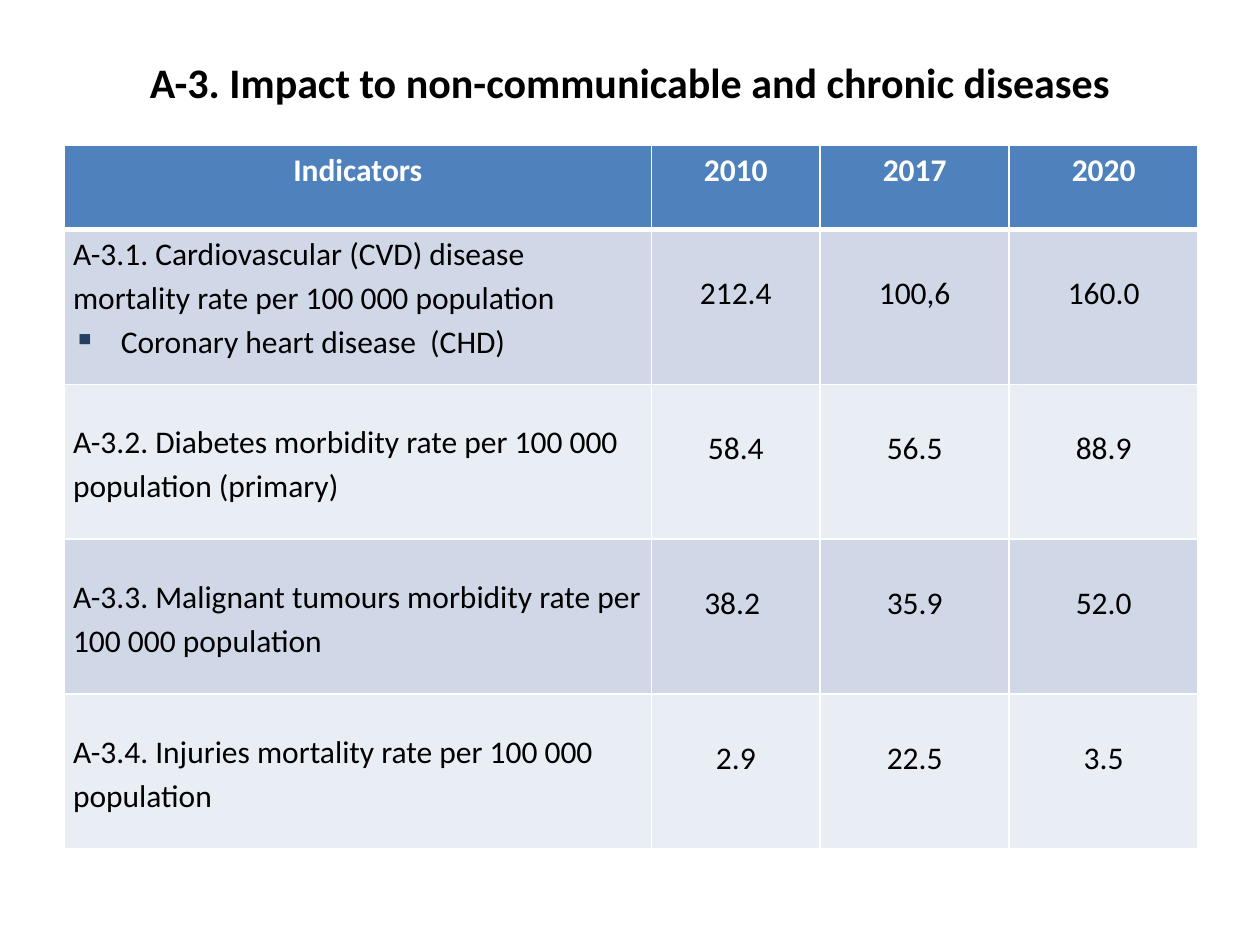
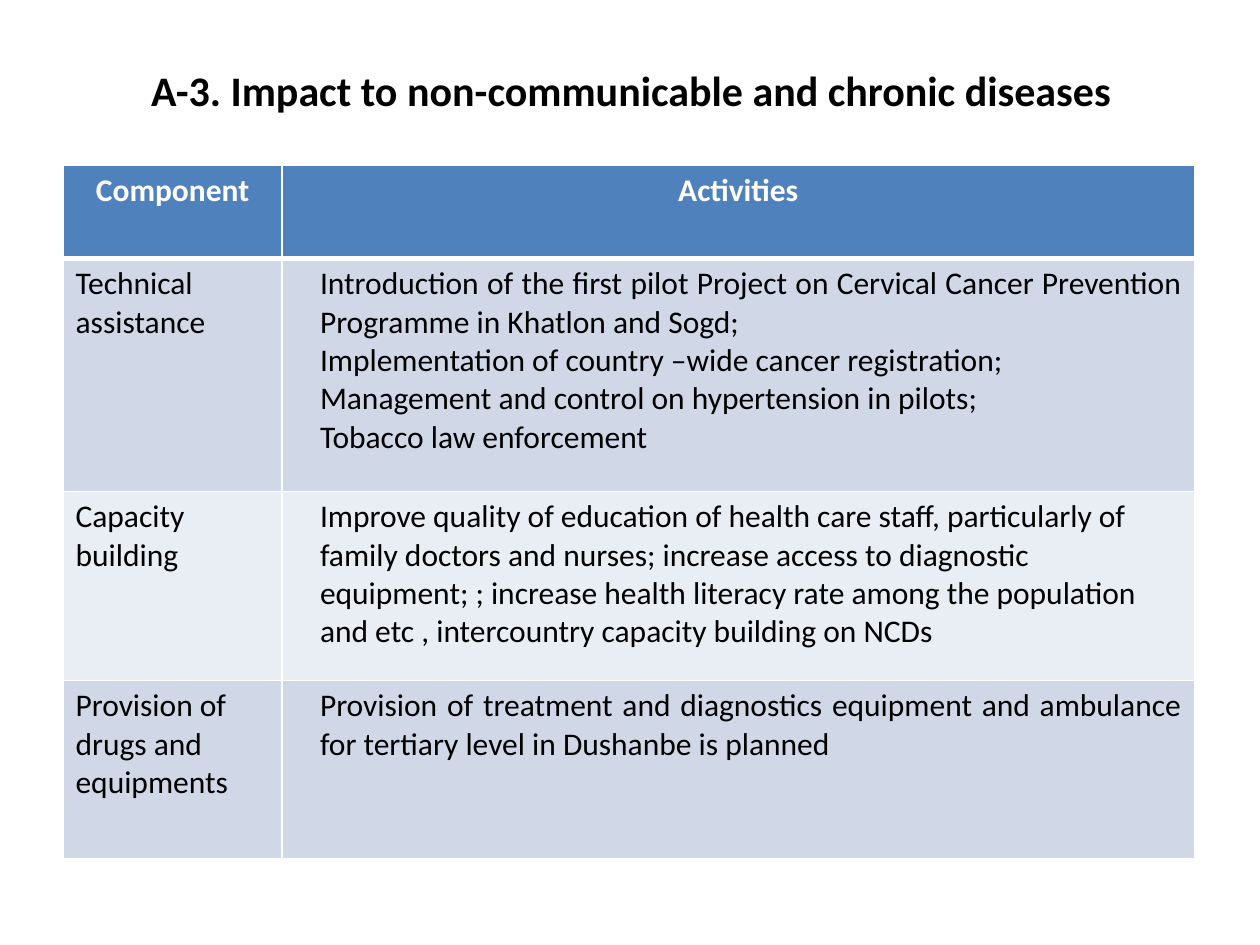
from lxml.etree import SubElement
from pptx import Presentation
from pptx.dml.color import RGBColor
from pptx.enum.text import MSO_ANCHOR as Anchor, PP_ALIGN as Align
from pptx.oxml.ns import qn
from pptx.util import Inches, Pt

COLORS = {
    "text": "000000",
    "header": "4F81BD",
    "header_text": "FFFFFF",
    "border": "FFFFFF",
    "band_dark": "D0D8E8",
    "band_light": "E9EDF4",
    "bullet": "244061",
}
FONT = "Calibri"
TITLE = "А-3. Impact to non-communicable and chronic diseases"

INDICATORS = [
    ["Indicators", "2010", "2017", "2020"],
    ["А-3.1. Cardiovascular (CVD) disease mortality rate per 100 000 population\n"
     "Coronary heart disease  (CHD)", "212.4", "100,6", "160.0"],
    ["А-3.2. Diabetes morbidity rate per 100 000 population (primary)", "58.4", "56.5", "88.9"],
    ["А-3.3. Malignant tumours morbidity rate per 100 000 population", "38.2 ", "35.9", "52.0"],
    ["А-3.4. Injuries mortality rate per 100 000 population", "2.9", "22.5", "3.5"],
]
ACTIVITIES = [
    ["Component", "Activities"],
    ["Technical assistance",
     "Introduction of the first pilot Project on Cervical Cancer Prevention Programme "
     "in Khatlon and Sogd;\n"
     "Implementation of country –wide cancer registration; \n"
     "Management and control on hypertension in pilots; \n"
     "Tobacco law enforcement "],
    ["Capacity building",
     "Improve quality of education of health care staff, particularly of family doctors "
     "and nurses; increase access to diagnostic equipment; ; increase health literacy rate "
     "among the population and etc , intercountry capacity building on NCDs"],
    ["Provision of drugs and equipments",
     "Provision of treatment and diagnostics equipment and ambulance for tertiary level "
     "in Dushanbe is planned"],
]
PAGES = [
    ((0.5, 0.3, 9, 0.69), (0.51, 1.15), [4.66, 1.34, 1.5, 1.5], [0.67] + [1.23] * 4, INDICATORS),
    ((0.51, 0.29, 9, 0.85), (0.5, 1.31), [1.74, 7.24], [0.74, 1.85, 1.5, 1.42], ACTIVITIES),
]


def format_text(text_frame, size, color, bold, align):
    for paragraph in text_frame.paragraphs:
        paragraph.alignment = align
        for run in paragraph.runs:
            run.font.name = FONT
            run.font.size = Pt(size)
            run.font.bold = bold
            run.font.color.rgb = RGBColor.from_string(COLORS[color])


def style_cell(cell, fill, top_width, bottom_width):
    properties = cell._tc.get_or_add_tcPr()
    widths = {"a:lnL": 1, "a:lnR": 1, "a:lnT": top_width, "a:lnB": bottom_width}
    for side, width in widths.items():
        line = SubElement(properties, qn(side), w=str(Pt(width)))
        line_fill = SubElement(line, qn("a:solidFill"))
        SubElement(line_fill, qn("a:srgbClr"), val=COLORS["border"])
    cell.fill.solid()
    cell.fill.fore_color.rgb = RGBColor.from_string(COLORS[fill])


presentation = Presentation()
presentation.slide_width = Inches(10)
presentation.slide_height = Inches(7.5)
tables = []

for title_box, (left, top), widths, heights, rows in PAGES:
    slide = presentation.slides.add_slide(presentation.slide_layouts[6])
    title = slide.shapes.add_textbox(*map(Inches, title_box)).text_frame
    title.word_wrap = True
    title.vertical_anchor = Anchor.MIDDLE
    title.text = TITLE
    format_text(title, 24, "text", True, Align.CENTER)

    table = slide.shapes.add_table(
        len(rows), len(widths), Inches(left), Inches(top),
        Inches(sum(widths)), Inches(sum(heights))).table
    table.horz_banding = False
    for column, width in zip(table.columns, widths):
        column.width = Inches(width)
    for row, height in zip(table.rows, heights):
        row.height = Inches(height)

    for row_index, row in enumerate(rows):
        is_header = row_index == 0
        band = "band_dark" if row_index % 2 else "band_light"
        for column_index, text in enumerate(row):
            cell = table.cell(row_index, column_index)
            style_cell(cell, "header" if is_header else band,
                       3 if row_index == 1 else 1, 3 if is_header else 1)
            cell.text_frame.text = text
            format_text(cell.text_frame, 18, "header_text" if is_header else "text",
                        is_header, Align.CENTER if is_header else Align.LEFT)
    tables.append(table)

indicator_table, activity_table = tables

for row_index in range(1, len(INDICATORS)):
    label, *values = indicator_table.rows[row_index].cells
    label.margin_left = label.margin_right = Inches(0.07)
    label.margin_top = label.margin_bottom = 0
    label.vertical_anchor = Anchor.TOP if row_index == 1 else Anchor.MIDDLE
    for paragraph in label.text_frame.paragraphs:
        paragraph.line_spacing = 1.15
    for value in values:
        value.margin_top = Inches(0.36)
        value.text_frame.paragraphs[0].alignment = Align.CENTER

bullet_paragraph = indicator_table.cell(1, 0).text_frame.paragraphs[1]
bullet_properties = bullet_paragraph._p.get_or_add_pPr()
bullet_properties.set("marL", str(Inches(0.38)))
bullet_properties.set("indent", str(-Inches(0.38)))
bullet_color = SubElement(bullet_properties, qn("a:buClr"))
SubElement(bullet_color, qn("a:srgbClr"), val=COLORS["bullet"])
SubElement(bullet_properties, qn("a:buChar"), char="▪")

for row_index in range(1, len(ACTIVITIES)):
    for paragraph in activity_table.cell(row_index, 1).text_frame.paragraphs:
        paragraph.alignment = Align.LEFT if row_index == 2 else Align.JUSTIFY
        paragraph._p.get_or_add_pPr().set("marL", str(Inches(0.2)))

presentation.save("out.pptx")
